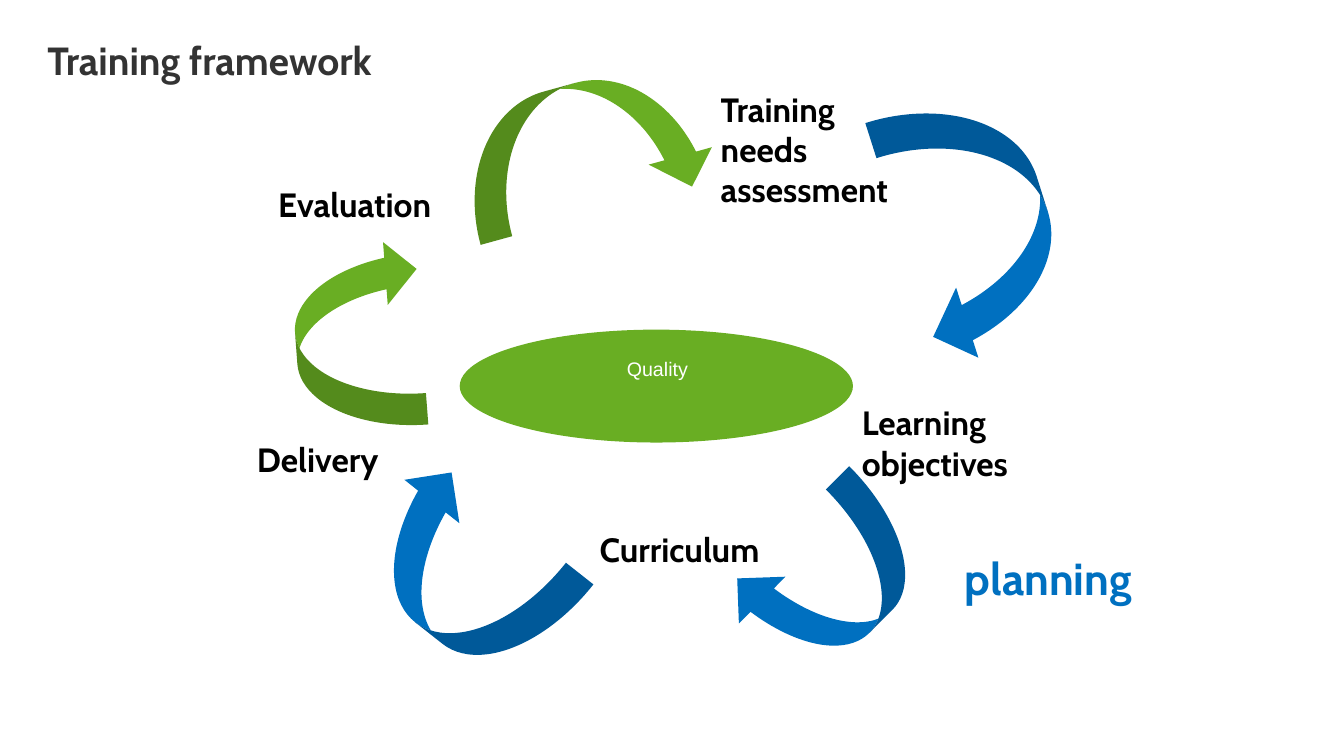
from dataclasses import dataclass

from pptx import Presentation
from pptx.dml.color import RGBColor
from pptx.enum import shapes, text
from pptx.shapes.autoshape import Shape
from pptx.slide import Slide
from pptx.util import Inches, Pt

GREEN = RGBColor(0x69, 0xAE, 0x23)
BLUE = RGBColor(0x00, 0x70, 0xC0)
BLACK = RGBColor(0x00, 0x00, 0x00)
WHITE = RGBColor(0xFF, 0xFF, 0xFF)
DARK_GRAY = RGBColor(0x33, 0x33, 0x33)


@dataclass(frozen=True)
class Label:
    wording: str
    left: float
    top: float
    width: float
    height: float = 0.51
    size: int = 24
    color: RGBColor = BLACK
    font: str = "Cabin"
    bold: bool = True
    wrap: bool = True
    alignment: text.PP_ALIGN = text.PP_ALIGN.LEFT


@dataclass(frozen=True)
class Figure:
    left: float
    top: float
    width: float
    height: float
    color: RGBColor
    rotation: float = 0
    kind: shapes.MSO_SHAPE = shapes.MSO_SHAPE.CURVED_LEFT_ARROW


QUALITY_ELLIPSE = Figure(4.56, 3.27, 3.9, 1.12, GREEN, kind=shapes.MSO_SHAPE.OVAL)
CYCLE_ARROWS = [
    Figure(8.94, 0.94, 1.46, 2.59, BLUE, 342.4),
    Figure(7.56, 4.81, 1.31, 1.9, BLUE, 44.9),
    Figure(3.92, 4.61, 1.39, 2.14, BLUE, 128.3),
    Figure(2.93, 2.4, 1.25, 1.86, GREEN, 175.7),
    Figure(5.15, 0.22, 1.3, 2.5, GREEN, 254.6),
]
TITLE = Label("Training framework", 0.47, 0.41, 11.28, 0.64, 28, DARK_GRAY)
LABELS = [
    Label("Training needs assessment", 7.05, 0.83, 2.25, 1.31),
    Label("Learning objectives", 8.45, 3.94, 2.5, 0.91),
    Label("Curriculum", 5.85, 5.2, 2.87),
    Label("Delivery", 2.45, 4.3, 2.95),
    Label("Evaluation", 2.66, 1.78, 2.95),
    Label("planning", 9.47, 5.41, 2.17, 0.64, 32, BLUE, wrap=False),
    Label("Quality", 4.86, 3.49, 3.32, 0.34, 14, WHITE, "Arial", False,
          alignment=text.PP_ALIGN.CENTER),
]


def add_figure(slide: Slide, figure: Figure) -> None:
    shape = slide.shapes.add_shape(
        figure.kind, Inches(figure.left), Inches(figure.top),
        Inches(figure.width), Inches(figure.height))
    shape.rotation = figure.rotation
    shape.shadow.inherit = False
    shape.fill.solid()
    shape.fill.fore_color.rgb = figure.color
    shape.line.fill.background()


def add_label(slide: Slide, label: Label) -> Shape:
    box = slide.shapes.add_textbox(
        Inches(label.left), Inches(label.top), Inches(label.width), Inches(label.height))
    frame = box.text_frame
    frame.word_wrap = label.wrap
    frame.auto_size = text.MSO_AUTO_SIZE.SHAPE_TO_FIT_TEXT
    paragraph = frame.paragraphs[0]
    paragraph.text = label.wording
    paragraph.alignment = label.alignment
    paragraph.font.name = label.font
    paragraph.font.size = Pt(label.size)
    paragraph.font.bold = label.bold
    paragraph.font.color.rgb = label.color
    return box


def add_title(slide: Slide) -> None:
    frame = add_label(slide, TITLE).text_frame
    frame.auto_size = text.MSO_AUTO_SIZE.NONE
    frame.margin_left = frame.margin_top = frame.margin_right = frame.margin_bottom = 0
    frame.paragraphs[0].line_spacing = 0.9


def main() -> None:
    presentation = Presentation()
    presentation.slide_width = Inches(13.33)
    presentation.slide_height = Inches(7.5)
    slide = presentation.slides.add_slide(presentation.slide_layouts[6])
    add_title(slide)
    for figure in [QUALITY_ELLIPSE, *CYCLE_ARROWS]:
        add_figure(slide, figure)
    for label in LABELS:
        add_label(slide, label)
    presentation.save("out.pptx")


if __name__ == "__main__":
    main()
